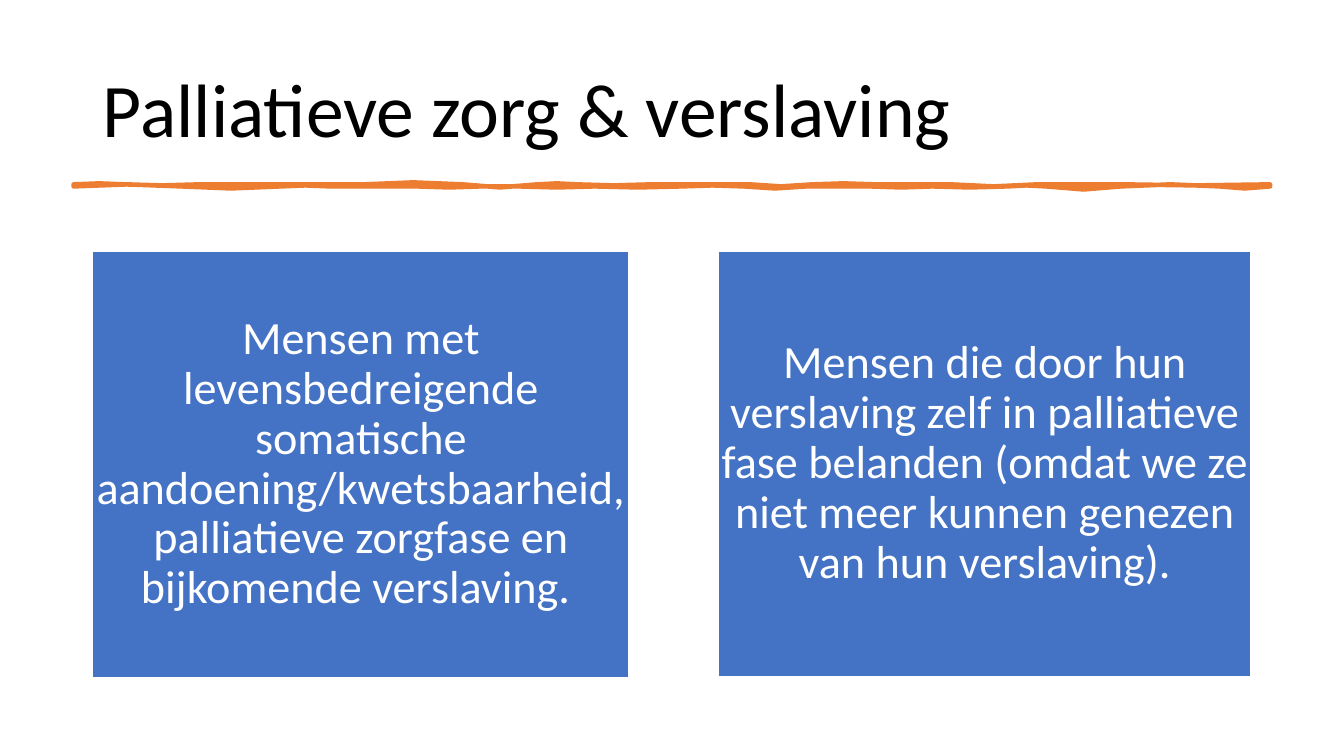
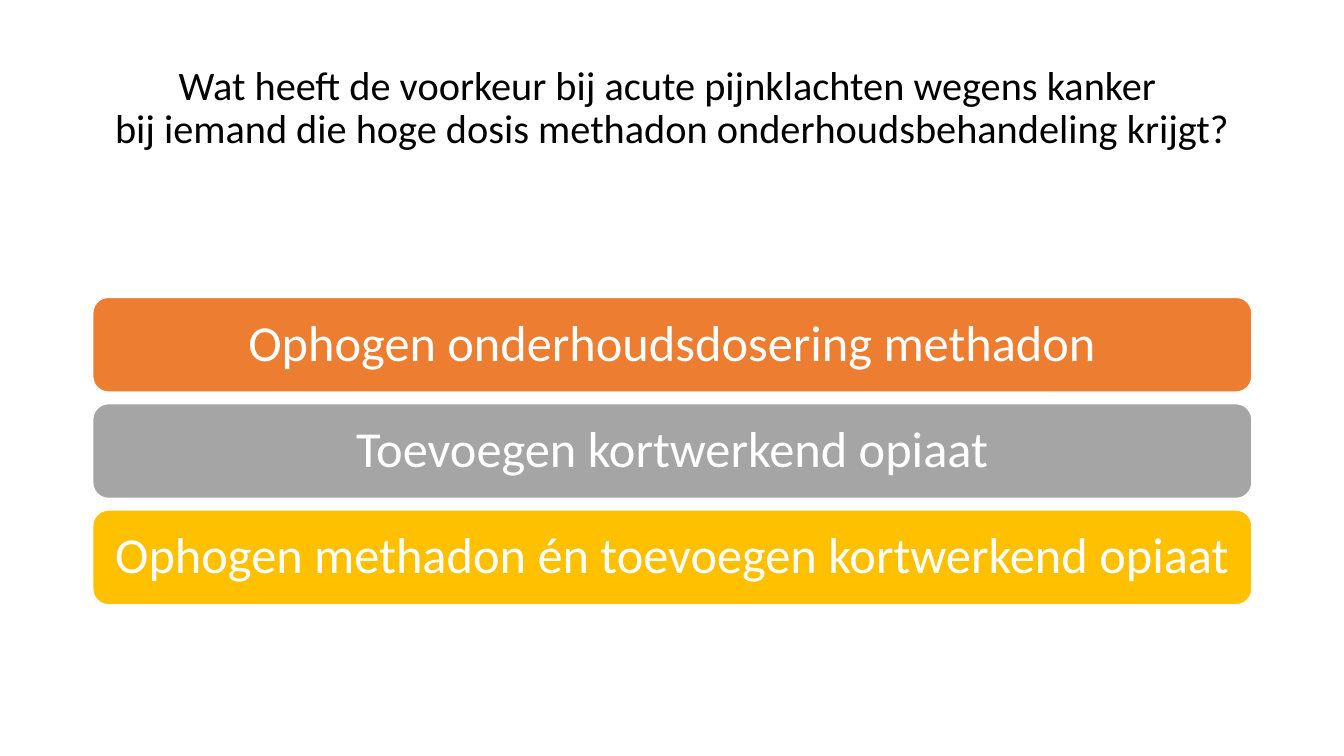
from pptx import Presentation
from pptx.dml.color import RGBColor
from pptx.enum.shapes import MSO_SHAPE
from pptx.enum.text import MSO_ANCHOR, MSO_AUTO_SIZE, PP_ALIGN
from pptx.util import Inches, Pt

RECTANGLE = MSO_SHAPE.RECTANGLE
ROUNDED = MSO_SHAPE.ROUNDED_RECTANGLE
MIDDLE = MSO_ANCHOR.MIDDLE
NO_AUTOFIT = MSO_AUTO_SIZE.NONE
LEFT, CENTER = PP_ALIGN.LEFT, PP_ALIGN.CENTER

COLORS = {
    "text": "000000",
    "white": "FFFFFF",
    "blue": "4472C4",
    "orange": "ED7D31",
    "gray": "A5A5A5",
    "yellow": "FFC000",
}
FONT = "Calibri"
LINE_SPACING = 0.9
SLIDE_HEIGHT = 7.5
SLIDE_WIDTH = SLIDE_HEIGHT * 16 / 9
MARGIN_LEFT, CONTENT_WIDTH = 0.92, 11.5
TITLE_ONLY_LAYOUT = 5

# Each wave of the rule: height of its crest or dip, x where it ends.
RULE_LEFT, RULE_RIGHT = 0.73, 12.6
RULE_TOP, RULE_BOTTOM = 1.83, 1.85
TOP_WAVES = [
    (1.82, 1.24), (1.84, 1.98), (1.83, 2.84), (1.83, 3.22), (1.83, 3.61),
    (1.81, 4.59), (1.86, 5.33), (1.82, 5.72), (1.84, 6.46), (1.83, 7.44),
    (1.85, 8.06), (1.82, 8.68), (1.83, 9.43), (1.85, 10.29), (1.83, 11.15),
    (1.84, 12.6),
]
BOTTOM_WAVES = [
    (1.87, 12.1), (1.83, 11.12), (1.88, 10.38), (1.84, 9.99), (1.86, 9.25),
    (1.86, 8.63), (1.85, 8), (1.87, 7.38), (1.84, 6.76), (1.86, 5.9),
    (1.86, 5.15), (1.85, 4.77), (1.86, 4.14), (1.85, 3.28), (1.84, 2.78),
    (1.87, 1.8), (1.83, 0.73),
]


def rgb(color):
    return RGBColor.from_string(COLORS[color])


def place(shape, left, top, width, height):
    shape.left, shape.top = Inches(left), Inches(top)
    shape.width, shape.height = Inches(width), Inches(height)


def paint(shape, fill, line, line_width):
    shape.shadow.inherit = False
    shape.fill.solid()
    shape.fill.fore_color.rgb = rgb(fill)
    shape.line.color.rgb = rgb(line)
    shape.line.width = Pt(line_width)


def write(shape, text, size, color, align):
    frame = shape.text_frame
    frame.text = text
    frame.word_wrap = True
    frame.auto_size = NO_AUTOFIT
    frame.vertical_anchor = MIDDLE
    paragraph = frame.paragraphs[0]
    paragraph.alignment = align
    paragraph.line_spacing = LINE_SPACING
    paragraph.font.name = FONT
    paragraph.font.size = Pt(size)
    paragraph.font.color.rgb = rgb(color)


def add_titled_slide(prs, title, size, align, top, height):
    slide = prs.slides.add_slide(prs.slide_layouts[TITLE_ONLY_LAYOUT])
    place(slide.shapes.title, MARGIN_LEFT, top, CONTENT_WIDTH, height)
    write(slide.shapes.title, title, size, "text", align)
    return slide


def add_card(slide, preset, bounds, fill, text, size, inset):
    card = slide.shapes.add_shape(preset, *map(Inches, bounds))
    paint(card, fill, "white", 1)
    write(card, text, size, "white", CENTER)
    frame = card.text_frame
    frame.margin_left = frame.margin_right = Inches(inset)
    frame.margin_top = frame.margin_bottom = Inches(inset)


def trace_edge(start_x, edge_y, waves):
    """Return the middle and end point of each wave along an edge."""
    points = []
    for middle_y, end_x in waves:
        points += [(Inches((start_x + end_x) / 2), Inches(middle_y)),
                   (Inches(end_x), Inches(edge_y))]
        start_x = end_x
    return points


def add_hand_drawn_rule(slide):
    builder = slide.shapes.build_freeform(Inches(RULE_LEFT), Inches(RULE_TOP))
    builder.add_line_segments(
        trace_edge(RULE_LEFT, RULE_TOP, TOP_WAVES)
        + [(Inches(RULE_RIGHT), Inches(RULE_BOTTOM))]
        + trace_edge(RULE_RIGHT, RULE_BOTTOM, BOTTOM_WAVES),
        close=True)
    paint(builder.convert_to_shape(), "orange", "orange", 3.25)


def build_groups_slide(prs):
    slide = add_titled_slide(
        prs, "Palliatieve zorg & verslaving", 54, LEFT, 0.4, 1.45)
    add_hand_drawn_rule(slide)
    groups = [
        (MARGIN_LEFT, 5.32, 4.23,
         "Mensen met levensbedreigende somatische "
         "aandoening/kwetsbaarheid, palliatieve zorgfase en "
         "bijkomende verslaving. "),
        (7.13, 5.28, 4.22,
         "Mensen die door hun verslaving zelf in palliatieve fase belanden "
         "(omdat we ze niet meer kunnen genezen van hun verslaving)."),
    ]
    for left, width, height, text in groups:
        add_card(slide, RECTANGLE, (left, 2.49, width, height),
                 "blue", text, 33, 0.01)


def build_question_slide(prs):
    slide = add_titled_slide(
        prs,
        "Wat heeft de voorkeur bij acute pijnklachten wegens kanker \v"
        "bij iemand die hoge dosis methadon onderhoudsbehandeling krijgt?",
        28.8, CENTER, 0.75, 1.1)
    slide.shapes.title.text_frame.margin_bottom = Inches(0.49)
    answers = [
        ("orange", "Ophogen onderhoudsdosering methadon"),
        ("gray", "Toevoegen kortwerkend opiaat"),
        ("yellow", "Ophogen methadon én toevoegen kortwerkend opiaat"),
    ]
    first_top, last_top, height = 2.95, 5.06, 0.94
    pitch = (last_top - first_top) / (len(answers) - 1)
    for row, (fill, text) in enumerate(answers):
        bounds = (MARGIN_LEFT, first_top + row * pitch, CONTENT_WIDTH, height)
        add_card(slide, ROUNDED, bounds, fill, text, 36, 0.1)


def main():
    prs = Presentation()
    prs.slide_width = Inches(SLIDE_WIDTH)
    prs.slide_height = Inches(SLIDE_HEIGHT)
    build_groups_slide(prs)
    build_question_slide(prs)
    prs.save("out.pptx")


if __name__ == "__main__":
    main()
